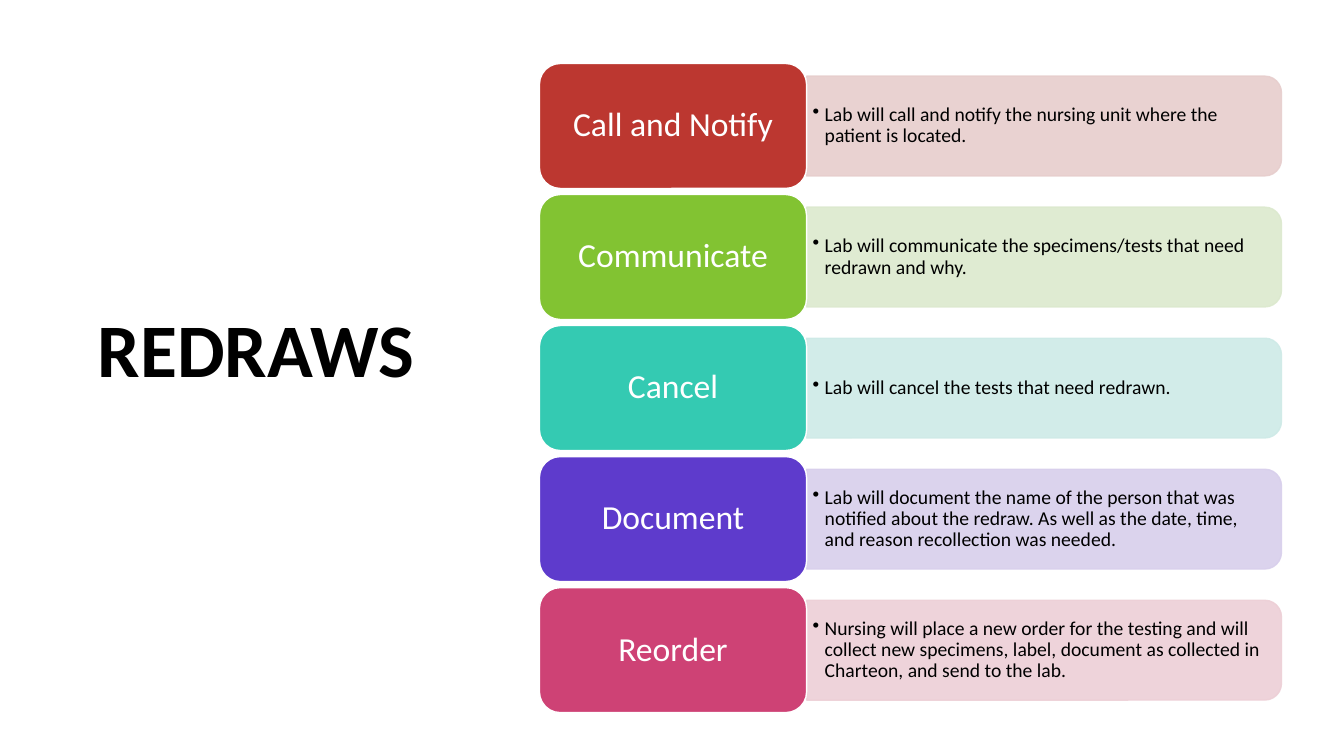
from lxml.etree import SubElement
from pptx import Presentation
from pptx.dml.color import RGBColor
from pptx.enum.shapes import MSO_SHAPE
from pptx.enum.text import MSO_ANCHOR, MSO_AUTO_SIZE, PP_ALIGN
from pptx.oxml.ns import qn
from pptx.util import Inches, Pt

BLACK = RGBColor(0x00, 0x00, 0x00)
WHITE = RGBColor(0xFF, 0xFF, 0xFF)
RED, ROSE = RGBColor(0xBC, 0x37, 0x30), RGBColor(0xE7, 0xCE, 0xCD)
GREEN, LIME = RGBColor(0x82, 0xC3, 0x32), RGBColor(0xDC, 0xE9, 0xCE)
TEAL, MINT = RGBColor(0x34, 0xCA, 0xB2), RGBColor(0xCE, 0xEA, 0xE7)
VIOLET, LILAC = RGBColor(0x5E, 0x3B, 0xCC), RGBColor(0xD8, 0xCF, 0xEC)
PINK, BLUSH = RGBColor(0xCE, 0x42, 0x75), RGBColor(0xED, 0xCF, 0xD6)

STEPS = [
    ("Call and Notify", RED, ROSE,
     "Lab will call and notify the nursing unit where the patient is located."),
    ("Communicate", GREEN, LIME,
     "Lab will communicate the specimens/tests that need redrawn and why."),
    ("Cancel", TEAL, MINT,
     "Lab will cancel the tests that need redrawn."),
    ("Document", VIOLET, LILAC,
     "Lab will document the name of the person that was notified about the "
     "redraw. As well as the date, time, and reason recollection was needed."),
    ("Reorder", PINK, BLUSH,
     "Nursing will place a new order for the testing and will collect new "
     "specimens, label, document as collected in Charteon, and send to the lab."),
]
TOP, PITCH = 0.63, 1.3
LEFT, LABEL_W, LABEL_H = 5.35, 2.65, 1.24
PANEL_W, PANEL_H = 4.71, 0.99
NOTE_W, NOTE_H = 4.66, 0.89


def add_block(kind, x, y, w, h, fill, line):
    block = slide.shapes.add_shape(kind, Inches(x), Inches(y), Inches(w), Inches(h))
    block.shadow.inherit = False
    block.fill.solid()
    block.fill.fore_color.rgb = fill
    block.line.color.rgb = line
    block.line.width = Pt(1)
    return block


def set_text(frame, text, size, color, spacing):
    frame.word_wrap = True
    para = frame.paragraphs[0]
    para.text = text
    para.line_spacing = spacing
    para.font.name = "Calibri"
    para.font.size = Pt(size)
    para.font.color.rgb = color
    return para


prs = Presentation()
prs.slide_width, prs.slide_height = Inches(13.33), Inches(7.5)
slide = prs.slides.add_slide(prs.slide_layouts[5])

title = slide.shapes.title
title.left, title.top = Inches(0.87), Inches(3.08)
title.width, title.height = Inches(4.21), Inches(1.33)
title.text_frame.auto_size = MSO_AUTO_SIZE.NONE
title.text_frame.vertical_anchor = MSO_ANCHOR.TOP
head = set_text(title.text_frame, "REDRAWS", 54, BLACK, 0.85)
head.alignment = PP_ALIGN.LEFT
head.font.bold = True

for row, (name, color, tint, detail) in enumerate(STEPS):
    top = TOP + row * PITCH
    mid = top + LABEL_H / 2
    right = LEFT + LABEL_W

    # The panel is drawn upright and turned so its round corners face right
    panel = add_block(MSO_SHAPE.ROUND_2_SAME_RECTANGLE,
                      right + (PANEL_W - PANEL_H) / 2, mid - PANEL_W / 2,
                      PANEL_H, PANEL_W, tint, tint)
    panel.rotation = 90
    for paint in panel._element.spPr.iter(qn("a:srgbClr")):
        SubElement(paint, qn("a:alpha"), val="90000")

    note = slide.shapes.add_textbox(Inches(right), Inches(mid - NOTE_H / 2),
                                    Inches(NOTE_W), Inches(NOTE_H))
    frame = note.text_frame
    frame.vertical_anchor = MSO_ANCHOR.MIDDLE
    frame.margin_left = frame.margin_right = Inches(0.06)
    frame.margin_top = frame.margin_bottom = Inches(0.03)
    props = frame.paragraphs[0]._p.get_or_add_pPr()
    props.set("marL", str(Inches(0.12)))
    props.set("indent", str(-Inches(0.12)))
    SubElement(props, qn("a:buChar"), char="•")
    set_text(frame, detail, 14, BLACK, 0.9)

    label = add_block(MSO_SHAPE.ROUNDED_RECTANGLE, LEFT, top,
                      LABEL_W, LABEL_H, color, WHITE)
    label.text_frame.vertical_anchor = MSO_ANCHOR.MIDDLE
    set_text(label.text_frame, name, 24, WHITE, 0.9).alignment = PP_ALIGN.CENTER

prs.save("out.pptx")
